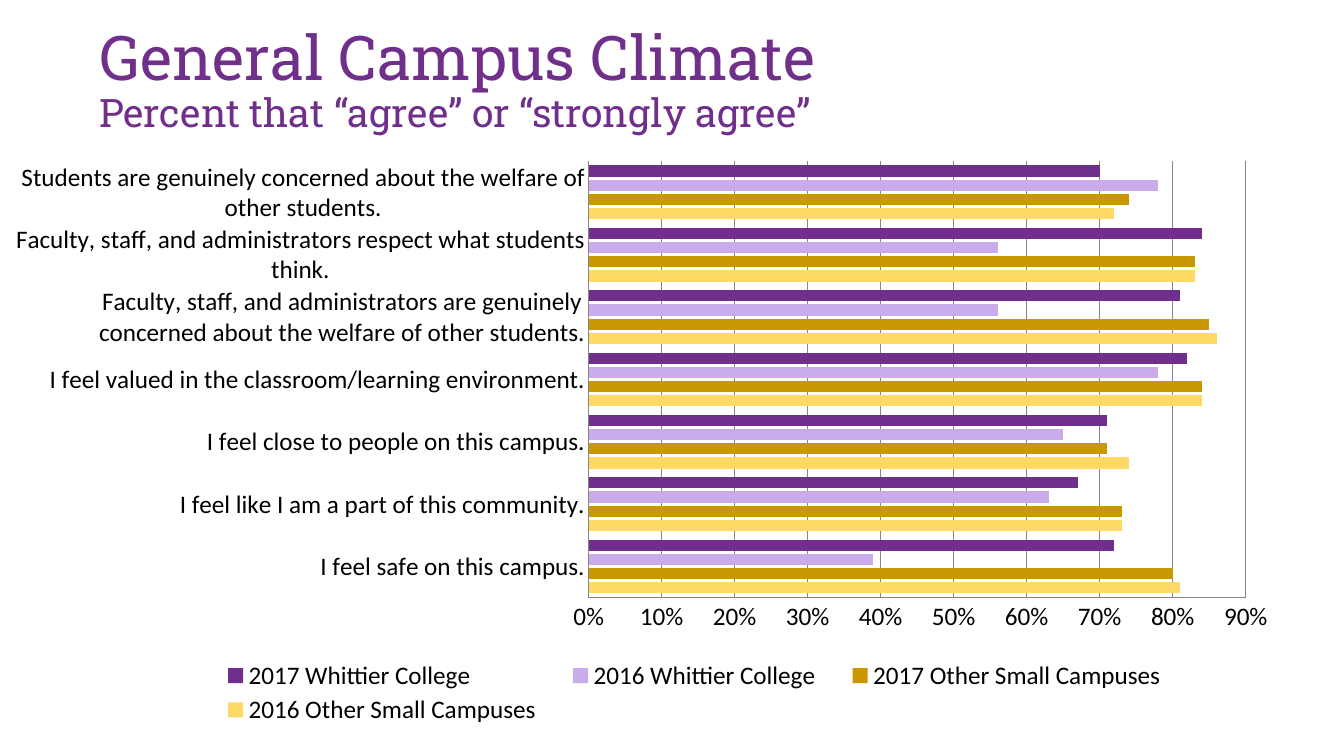
import dataclasses
import pptx
import pptx.chart.data
import pptx.dml.color
import pptx.enum.chart
import pptx.enum.text
import pptx.oxml
import pptx.oxml.ns
import pptx.util

PX = 914400 / 100.8


@dataclasses.dataclass(frozen=True)
class Theme:
    """Hold the colours, fonts and type sizes."""
    purple: str = "702F8A"
    lilac: str = "CAACEA"
    gold: str = "C99700"
    yellow: str = "FFD966"
    ink: str = "000000"
    grid: str = "868686"
    head: str = "Roboto Slab"
    body: str = "Calibri"
    title: int = 44
    sub: int = 28
    text: int = 18


THEME = Theme()

CLAIMS = [
    "I feel safe on this campus.",
    "I feel like I am a part of this community.",
    "I feel close to people on this campus.",
    "I feel valued in the classroom/learning environment.",
    "Faculty, staff, and administrators are genuinely concerned about the welfare of other students.",
    "Faculty, staff, and administrators respect what students think.",
    "Students are genuinely concerned about the welfare of other students.",
]
SERIES = [
    ("2016 Other Small Campuses", THEME.yellow, [0.81, 0.73, 0.74, 0.84, 0.86, 0.83, 0.72]),
    ("2017 Other Small Campuses", THEME.gold, [0.8, 0.73, 0.71, 0.84, 0.85, 0.83, 0.74]),
    ("2016 Whittier College", THEME.lilac, [0.39, 0.63, 0.65, 0.78, 0.56, 0.56, 0.78]),
    ("2017 Whittier College", THEME.purple, [0.72, 0.67, 0.71, 0.82, 0.81, 0.84, 0.7]),
]


def emu(*sizes):
    """Turn px lengths into EMU."""
    return [round(size * PX) for size in sizes]


def color(code):
    """Make a colour from its hex code."""
    return pptx.dml.color.RGBColor.from_string(code)


def layout(box, inner=False):
    """Make a manual chart layout from fractions of the chart."""
    parts = '<c:layoutTarget val="inner"/>' if inner else ""
    parts += '<c:xMode val="edge"/><c:yMode val="edge"/>'
    parts += "".join(f'<c:{key} val="{size}"/>' for key, size in zip("xywh", box))
    space = pptx.oxml.ns.nsdecls("c")
    return pptx.oxml.parse_xml(
        f"<c:layout {space}><c:manualLayout>{parts}</c:manualLayout></c:layout>")


def put_title(slide, box):
    """Place the title and its smaller second line."""
    title = slide.shapes.title
    title.left, title.top, title.width, title.height = emu(*box)
    frame = title.text_frame
    frame.word_wrap = True
    frame.auto_size = pptx.enum.text.MSO_AUTO_SIZE.NONE
    frame.vertical_anchor = pptx.enum.text.MSO_ANCHOR.MIDDLE
    para = frame.paragraphs[0]
    para.alignment = pptx.enum.text.PP_ALIGN.LEFT
    para.line_spacing = 0.9
    para.font.name = THEME.head
    para.font.color.rgb = color(THEME.purple)
    main = para.add_run()
    main.text = "General Campus Climate"
    main.font.size = pptx.util.Pt(THEME.title)
    para.add_line_break()
    sub = para.add_run()
    sub.text = "Percent that “agree” or “strongly agree”"
    sub.font.size = pptx.util.Pt(THEME.sub)


def style_axes(chart):
    """Format both axes and the grid."""
    none = pptx.enum.chart.XL_TICK_MARK.NONE
    for axis in (chart.category_axis, chart.value_axis):
        axis.major_tick_mark = axis.minor_tick_mark = none
        axis.format.line.color.rgb = color(THEME.grid)
    chart.category_axis.has_major_gridlines = False
    scale = chart.value_axis
    scale.minimum_scale, scale.maximum_scale, scale.major_unit = 0, 0.9, 0.1
    scale.tick_labels.number_format = "0%"
    scale.tick_labels.number_format_is_linked = False
    scale.has_major_gridlines = True
    scale.major_gridlines.format.line.color.rgb = color(THEME.grid)


def put_chart(slide, box):
    """Place the bar chart with its legend."""
    data = pptx.chart.data.CategoryChartData(number_format="0%")
    data.categories = CLAIMS
    for name, _, shares in SERIES:
        data.add_series(name, shares)
    kind = pptx.enum.chart.XL_CHART_TYPE.BAR_CLUSTERED
    chart = slide.shapes.add_chart(kind, *emu(*box), data).chart
    chart.has_title = False
    chart.font.name = THEME.body
    chart.font.size = pptx.util.Pt(THEME.text)
    chart.font.color.rgb = color(THEME.ink)
    style_axes(chart)
    plot = chart.plots[0]
    plot.vary_by_categories = False
    plot.gap_width, plot.overlap = 75, -25
    for bars, (_, code, _) in zip(plot.series, SERIES):
        bars.format.fill.solid()
        bars.format.fill.fore_color.rgb = color(code)
    chart.has_legend = True
    legend = chart.legend
    legend.position = pptx.enum.chart.XL_LEGEND_POSITION.BOTTOM
    legend.include_in_layout = False
    key = legend._element
    for old in key.findall(pptx.oxml.ns.qn("c:layout")):
        key.remove(old)
    key.find(pptx.oxml.ns.qn("c:legendPos")).addnext(layout((0.14, 0.86, 0.77, 0.12)))
    area = chart._chartSpace.chart.plotArea
    for old in area.findall(pptx.oxml.ns.qn("c:layout")):
        area.remove(old)
    area.insert(0, layout((0.443, 0.037, 0.511, 0.725), inner=True))


def main():
    """Build and save the slide."""
    deck = pptx.Presentation()
    deck.slide_width, deck.slide_height = emu(1344, 756)
    slide = deck.slides.add_slide(deck.slide_layouts[5])
    put_title(slide, (89, 9, 1159, 146))
    put_chart(slide, (16, 139, 1289, 602))
    deck.save("out.pptx")


if __name__ == "__main__":
    main()
